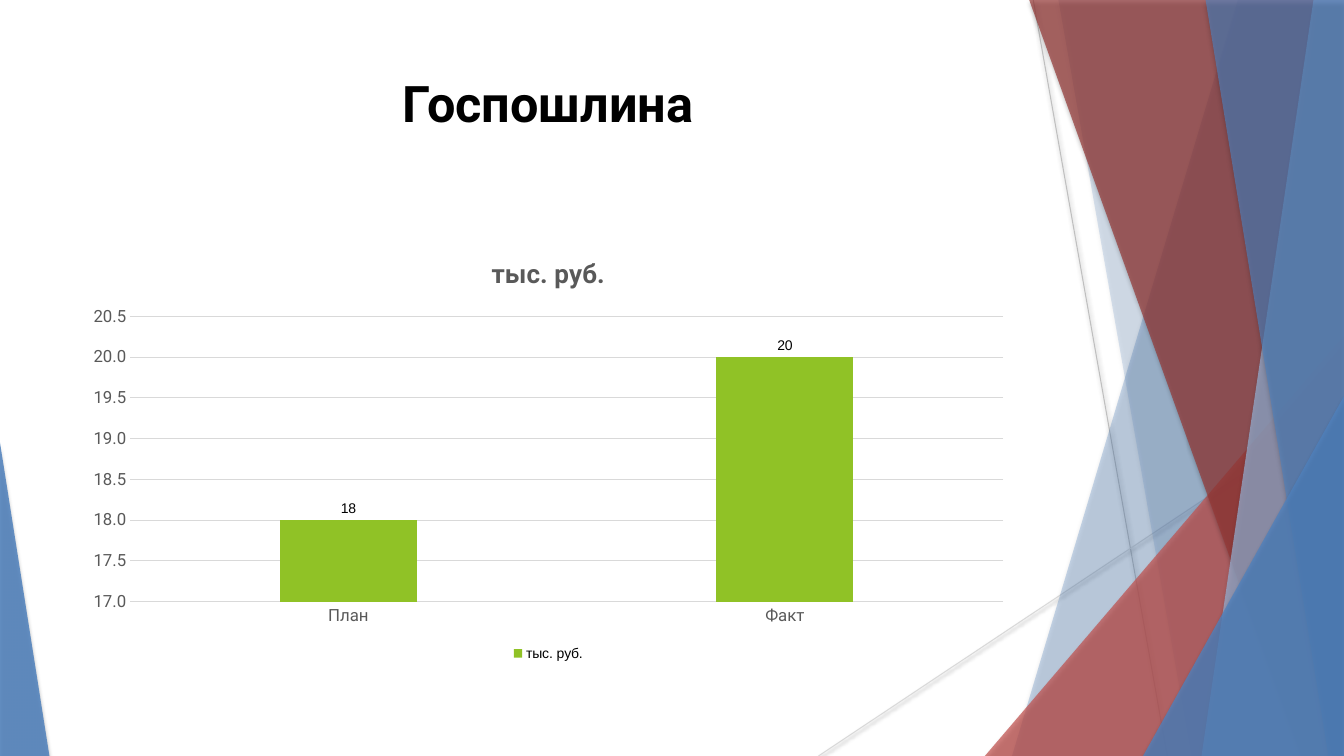
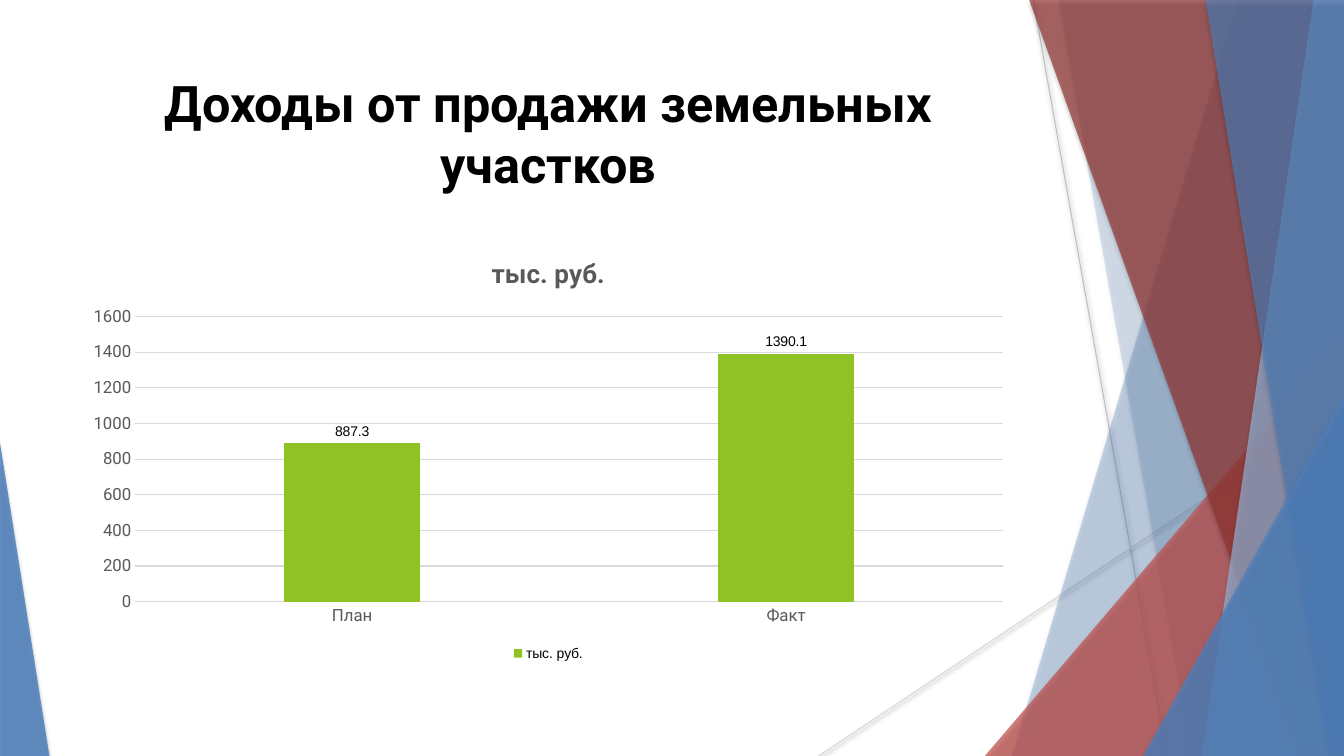
"""Builds two budget slides, each comparing plan and fact in a column chart."""
from dataclasses import dataclass

from lxml import etree
from pptx import Presentation
from pptx import util as u
from pptx.chart import data as chart_data
from pptx.dml.color import RGBColor
from pptx.enum import chart as ch, shapes, text
from pptx.oxml.ns import qn


@dataclass(frozen=True)
class Theme:
    blue: str = "4F81BD"
    pale_blue: str = "95B3D7"
    red: str = "C0504D"
    dark_red: str = "953735"
    green: str = "90C226"
    black: str = "000000"
    grey: str = "595959"
    line_grey: str = "BFBFBF"
    rule_grey: str = "D9D9D9"
    head_font: str = "Roboto"
    label_font: str = "Arial"
    title_size: float = 36
    chart_title_size: float = 18.6
    axis_size: float = 12
    label_size: float = 10
    hairline: float = 0.75
    shape_shadow: tuple = (35, 3, 2)
    line_shadow: tuple = (38, 3.1, 1.6)


class Deck:
    """Holds the theme and the current slide; lengths are percent of the slide."""

    def __init__(self, theme):
        self.theme = theme
        self.prs = Presentation()
        self.prs.slide_width, self.prs.slide_height = u.Inches(13.33), u.Inches(7.5)
        self.layout = self.prs.slide_layouts[5]
        self.slide = None

    def x(self, share):
        return u.Emu(round(self.prs.slide_width * share / 100))

    def y(self, share):
        return u.Emu(round(self.prs.slide_height * share / 100))

    def box(self, left, top, width, height):
        return self.x(left), self.y(top), self.x(width), self.y(height)

    def new_slide(self):
        self.slide = self.prs.slides.add_slide(self.layout)

    def style_font(self, font, face, size, color, bold=False):
        font.name, font.size, font.bold = face, u.Pt(size), bold
        font.color.rgb = RGBColor.from_string(color)

    def style_line(self, line, color):
        line.color.rgb = RGBColor.from_string(color)
        line.width = u.Pt(self.theme.hairline)

    def add_shadow(self, shape, alpha, blur, distance):
        effects = etree.SubElement(shape.element.spPr, qn("a:effectLst"))
        outer = etree.SubElement(
            effects, qn("a:outerShdw"), blurRad=str(u.Pt(blur)),
            dist=str(u.Pt(distance)), dir="5400000", algn="t", rotWithShape="0")
        color = etree.SubElement(outer, qn("a:srgbClr"), val=self.theme.black)
        etree.SubElement(color, qn("a:alpha"), val=str(alpha * 1000))

    def move_to_layout(self, shape):
        self.layout.shapes.element.append(shape.element)

    def paint(self, facet, color, alpha):
        facet.fill.solid()
        facet.fill.fore_color.rgb = RGBColor.from_string(color)
        tint = facet.element.spPr.find(".//" + qn("a:srgbClr"))
        etree.SubElement(tint, qn("a:alpha"), val=str(alpha * 1000))
        facet.line.fill.background()
        self.add_shadow(facet, *self.theme.shape_shadow)
        self.move_to_layout(facet)

    def ray(self, start, end, color):
        ray = self.slide.shapes.add_connector(
            shapes.MSO_CONNECTOR.STRAIGHT, self.x(start[0]), self.y(start[1]),
            self.x(end[0]), self.y(end[1]))
        self.style_line(ray.line, color)
        self.add_shadow(ray, *self.theme.line_shadow)
        self.move_to_layout(ray)

    def band(self, top_left, bottom_left, color, alpha):
        corners = [(top_left, 0), (100, 0), (100, 100), (bottom_left, 100)]
        points = [(self.x(across), self.y(down)) for across, down in corners]
        outline = self.slide.shapes.build_freeform(*points[0])
        outline.add_line_segments(points[1:], close=True)
        self.paint(outline.convert_to_shape(), color, alpha)

    def corner(self, left, right, top, apex, color, alpha):
        corner = self.slide.shapes.add_shape(
            shapes.MSO_SHAPE.ISOSCELES_TRIANGLE,
            *self.box(left, top, right - left, 100 - top))
        corner.adjustments[0] = apex
        self.paint(corner, color, alpha)

    def backdrop(self):
        t = self.theme
        self.ray((76.88, 0), (86.85, 100), t.line_grey)
        self.ray((100, 53.73), (60.9, 100), t.rule_grey)
        self.band(92.1, 75.3, t.blue, 30)
        self.band(78.75, 88.65, t.blue, 20)
        self.corner(73.28, 100, 44.4, 1, t.red, 72)
        self.band(76.58, 96.83, t.dark_red, 70)
        self.band(97.73, 89.4, t.pale_blue, 70)
        self.band(89.7, 98.85, t.blue, 65)
        self.corner(85.05, 100, 52.4, 1, t.blue, 80)
        self.corner(0, 3.68, 58.53, 0, t.blue, 85)

    def title(self, wording):
        heading = self.slide.shapes.title
        heading.left, heading.top, heading.width, heading.height = self.box(
            5.55, 8.93, 70.5, 19.2)
        frame = heading.text_frame
        frame.text = wording
        frame.word_wrap = True
        frame.auto_size = text.MSO_AUTO_SIZE.NONE
        frame.vertical_anchor = text.MSO_ANCHOR.TOP
        line = frame.paragraphs[0]
        line.alignment = text.PP_ALIGN.CENTER
        self.style_font(line.runs[0].font, self.theme.head_font,
                        self.theme.title_size, self.theme.black, True)

    def style_axis(self, axis):
        axis.major_tick_mark = axis.minor_tick_mark = ch.XL_TICK_MARK.NONE
        self.style_font(axis.tick_labels.font, self.theme.head_font,
                        self.theme.axis_size, self.theme.grey)

    def column_chart(self, unit, amounts, scale, number_format):
        t = self.theme
        budget = chart_data.CategoryChartData()
        budget.categories = list(amounts)
        budget.add_series(unit, list(amounts.values()))
        chart = self.slide.shapes.add_chart(
            ch.XL_CHART_TYPE.COLUMN_CLUSTERED,
            *self.box(5.55, 31.47, 70.5, 56.53), budget).chart
        self.style_font(chart.font, t.label_font, t.label_size, t.black)

        chart.has_title = True
        caption = chart.chart_title.text_frame
        caption.text = unit
        self.style_font(caption.paragraphs[0].runs[0].font, t.head_font,
                        t.chart_title_size, t.grey, True)
        chart.has_legend = True
        chart.legend.position = ch.XL_LEGEND_POSITION.BOTTOM
        chart.legend.include_in_layout = False

        self.style_axis(chart.category_axis)
        self.style_line(chart.category_axis.format.line, t.rule_grey)
        amount_axis = chart.value_axis
        self.style_axis(amount_axis)
        amount_axis.format.line.fill.background()
        self.style_line(amount_axis.major_gridlines.format.line, t.rule_grey)
        (amount_axis.minimum_scale, amount_axis.maximum_scale,
         amount_axis.major_unit) = scale
        amount_axis.tick_labels.number_format = number_format
        amount_axis.tick_labels.number_format_is_linked = False

        plot = chart.plots[0]
        plot.gap_width, plot.overlap, plot.vary_by_categories = 219, -27, False
        columns = plot.series[0]
        columns.format.fill.solid()
        columns.format.fill.fore_color.rgb = RGBColor.from_string(t.green)
        labels = columns.data_labels
        labels.show_value = True
        labels.position = ch.XL_LABEL_POSITION.OUTSIDE_END
        self.style_font(labels.font, t.label_font, t.label_size, t.black)


def main():
    incomes = [
        ("Госпошлина", (18, 20), (17, 20.5, 0.5), "0.0"),
        ("Доходы от продажи земельных участков", (887.3, 1390.1),
         (0, 1600, 200), "General"),
    ]
    deck = Deck(Theme())
    for index, (source, (plan, fact), scale, number_format) in enumerate(incomes):
        deck.new_slide()
        if index == 0:
            deck.backdrop()
        deck.title(source)
        deck.column_chart("тыс. руб.", {"План": plan, "Факт": fact},
                          scale, number_format)
    deck.prs.save("out.pptx")


if __name__ == "__main__":
    main()
